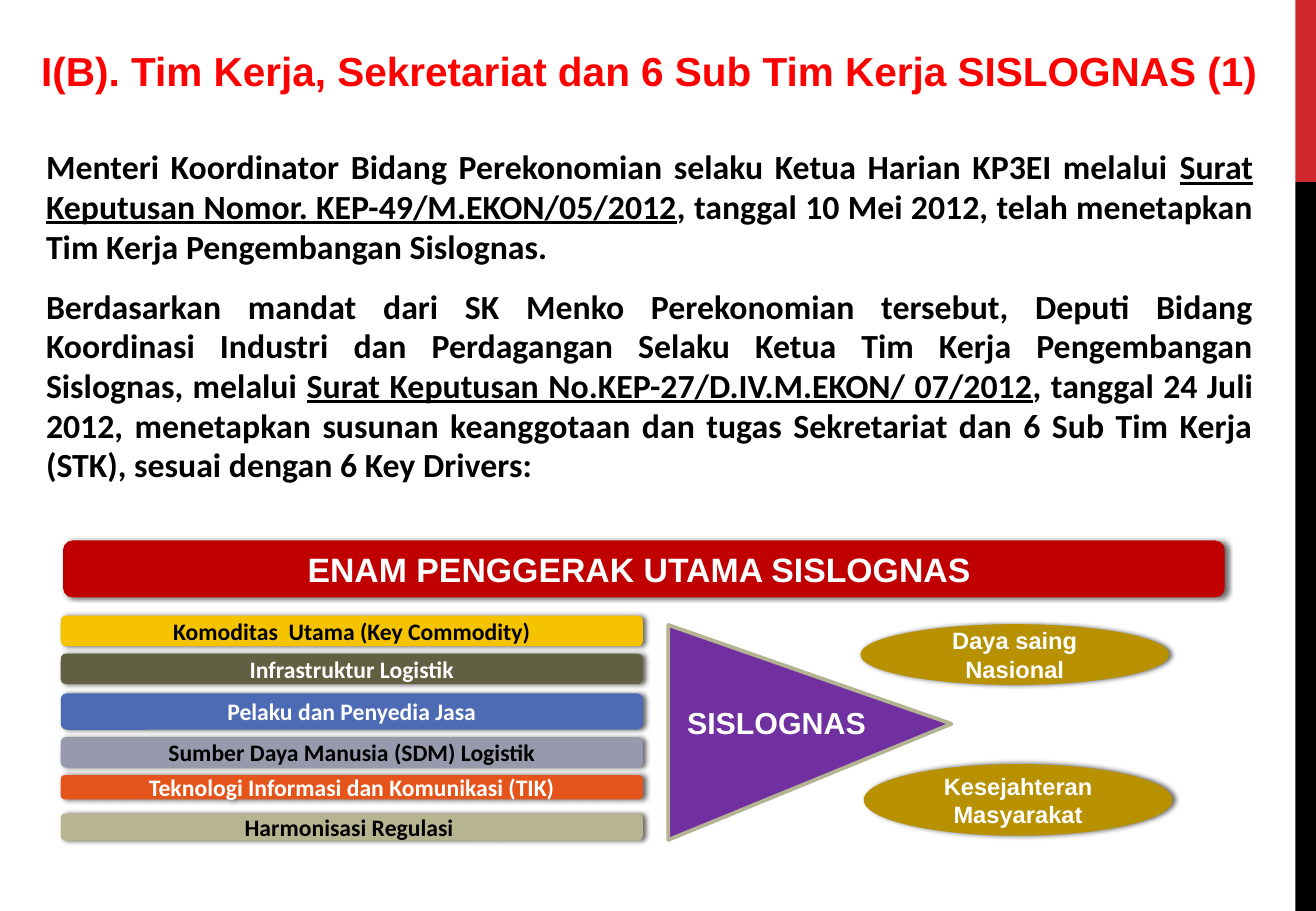
import dataclasses

import lxml.etree
import pptx
import pptx.dml.color
import pptx.enum.shapes
import pptx.enum.text
import pptx.oxml.ns
import pptx.util

Pt = pptx.util.Pt
Shape = pptx.enum.shapes.MSO_SHAPE
Align = pptx.enum.text.PP_ALIGN
Anchor = pptx.enum.text.MSO_ANCHOR


@dataclasses.dataclass(frozen=True)
class Theme:
    sans: str = "Arial"
    body: str = "Calibri"
    black: str = "000000"
    white: str = "FFFFFF"
    title: str = "FF0000"
    edge: str = "D1282E"
    banner: str = "C00000"
    arrow: str = "7030A0"
    rim: str = "B4B392"
    goal: str = "B89101"
    yellow: str = "F6C300"
    olive: str = "616042"
    blue: str = "4D6BB5"
    grey: str = "9799AD"
    orange: str = "E5551B"
    sand: str = "B6B590"
    large: int = 24
    mid: int = 20
    label: int = 18
    small: int = 14


T = Theme()


def paint(hue):
    return pptx.dml.color.RGBColor.from_string(hue)


def write(para, text, size=T.small, font=T.sans, hue=T.white, under=False):
    """Add one bold run to a paragraph."""
    run = para.add_run()
    run.text = text
    run.font.size = Pt(size)
    run.font.name = font
    run.font.bold = True
    run.font.underline = under
    run.font.color.rgb = paint(hue)


def frame(slide, box, anchor=Anchor.TOP, wrap=True):
    """Add a text box and return its text frame."""
    text = slide.shapes.add_textbox(*map(Pt, box)).text_frame
    text.word_wrap = wrap
    text.vertical_anchor = anchor
    return text


def shade(shape):
    """Give a shape a soft shadow to its right."""
    name = pptx.oxml.ns.qn
    effects = shape.element.spPr.find(name("a:effectLst"))
    outer = lxml.etree.SubElement(
        effects, name("a:outerShdw"), blurRad=str(Pt(3)), dist=str(Pt(1.5)),
        dir="0", algn="ctr", rotWithShape="0")
    hue = lxml.etree.SubElement(outer, name("a:srgbClr"), val=T.black)
    lxml.etree.SubElement(hue, name("a:alpha"), val="60000")


def block(slide, kind, box, fill, text="", shadow=True, **style):
    """Add a filled shape with centred text."""
    shape = slide.shapes.add_shape(kind, *map(Pt, box))
    shape.fill.solid()
    shape.fill.fore_color.rgb = paint(fill)
    shape.line.fill.background()
    shape.shadow.inherit = False
    if shadow:
        shade(shape)
    if text:
        shape.text_frame.word_wrap = True
        shape.text_frame.vertical_anchor = Anchor.MIDDLE
        para = shape.text_frame.paragraphs[0]
        para.alignment = Align.CENTER
        write(para, text, **style)
    return shape


def edge(slide, box):
    left, top, width, height = box
    split = height / 5
    block(slide, Shape.RECTANGLE, (left, top, width, split), T.edge, shadow=False)
    block(slide, Shape.RECTANGLE, (left, top + split, width, height - split),
          T.black, shadow=False)


def title(slide, box):
    para = frame(slide, box, Anchor.MIDDLE).paragraphs[0]
    write(para, "I(B). Tim Kerja, Sekretariat dan 6 Sub Tim Kerja SISLOGNAS (1)",
          size=T.large, hue=T.title)


def body(slide, box):
    """Add the two paragraphs; the middle part of each is underlined."""
    paras = [
        ("Menteri Koordinator Bidang Perekonomian selaku Ketua Harian KP3EI melalui ",
         "Surat Keputusan Nomor. KEP-49/M.EKON/05/2012",
         ", tanggal 10 Mei 2012, telah menetapkan Tim Kerja Pengembangan Sislognas."),
        ("Berdasarkan mandat dari SK Menko Perekonomian tersebut, Deputi Bidang "
         "Koordinasi Industri dan Perdagangan Selaku Ketua Tim Kerja Pengembangan "
         "Sislognas, melalui ",
         "Surat Keputusan No.KEP-27/D.IV.M.EKON/ 07/2012",
         ", tanggal 24 Juli 2012, menetapkan susunan keanggotaan dan tugas "
         "Sekretariat dan 6 Sub Tim Kerja (STK), sesuai dengan 6 Key Drivers:"),
    ]
    text = frame(slide, box)
    for row, parts in enumerate(paras):
        para = text.add_paragraph() if row else text.paragraphs[0]
        para.alignment = Align.JUSTIFY
        para.line_spacing = 0.98
        para.space_before = Pt(6 if row else 0)
        para.space_after = Pt(6)
        for spot, part in enumerate(parts):
            write(para, part, size=T.mid, font=T.body, hue=T.black, under=spot == 1)


def banner(slide, box):
    block(slide, Shape.ROUNDED_RECTANGLE, box, T.banner,
          "ENAM PENGGERAK UTAMA SISLOGNAS ", size=T.mid)


def drivers(slide, box):
    left, top, width, _ = box
    bars = [
        (0, 18, T.yellow, T.black, "Komoditas  Utama (Key Commodity)"),
        (22.5, 18, T.olive, T.white, "Infrastruktur Logistik"),
        (46, 21.6, T.blue, T.white, "Pelaku dan Penyedia Jasa"),
        (72, 18, T.grey, T.black, "Sumber Daya Manusia (SDM) Logistik"),
        (94.5, 14.4, T.orange, T.white, "Teknologi Informasi dan Komunikasi (TIK)"),
        (117.3, 16, T.sand, T.black, "Harmonisasi Regulasi "),
    ]
    for drop, height, fill, hue, text in bars:
        block(slide, Shape.ROUNDED_RECTANGLE, (left, top + drop, width, height),
              fill, text, font=T.body, hue=hue)


def goals(slide, box):
    left, top, width, height = box
    wide = 183
    block(slide, Shape.OVAL, (left, top, wide, 36), T.goal, "Daya saing Nasional")
    block(slide, Shape.OVAL, (left + width - wide, top + height - 42.5, wide, 42.5),
          T.goal, "Kesejahteran Masyarakat")


def arrow(slide, box):
    """Fill the box with a triangle that points right, and label it."""
    left, top, width, height = box
    shift = (width - height) / 2
    shape = block(slide, Shape.ISOSCELES_TRIANGLE,
                  (left + shift, top - shift, height, width), T.arrow, shadow=False)
    shape.adjustments[0] = 0.46
    shape.rotation = 90
    shape.line.color.rgb = paint(T.rim)
    shape.line.width = Pt(2.25)
    text = frame(slide, (left + 4, top + 43.5, 121.7, 28.8), wrap=False)
    write(text.paragraphs[0], "SISLOGNAS", size=T.label)


def main():
    deck = pptx.Presentation()
    deck.slide_width, deck.slide_height = Pt(779.76), Pt(540)
    slide = deck.slides.add_slide(deck.slide_layouts[6])
    edge(slide, (767.5, 0, 12.26, 540))
    title(slide, (17.3, 5.8, 750.2, 72))
    body(slide, (20.2, 84.2, 729.4, 426.2))
    drivers(slide, (36, 365, 344.9, 133.3))
    goals(slide, (509.8, 370, 185, 125.4))
    arrow(slide, (396, 370.5, 167.8, 127.4))
    banner(slide, (37.4, 320.4, 688.3, 33.8))
    deck.save("out.pptx")


if __name__ == "__main__":
    main()
